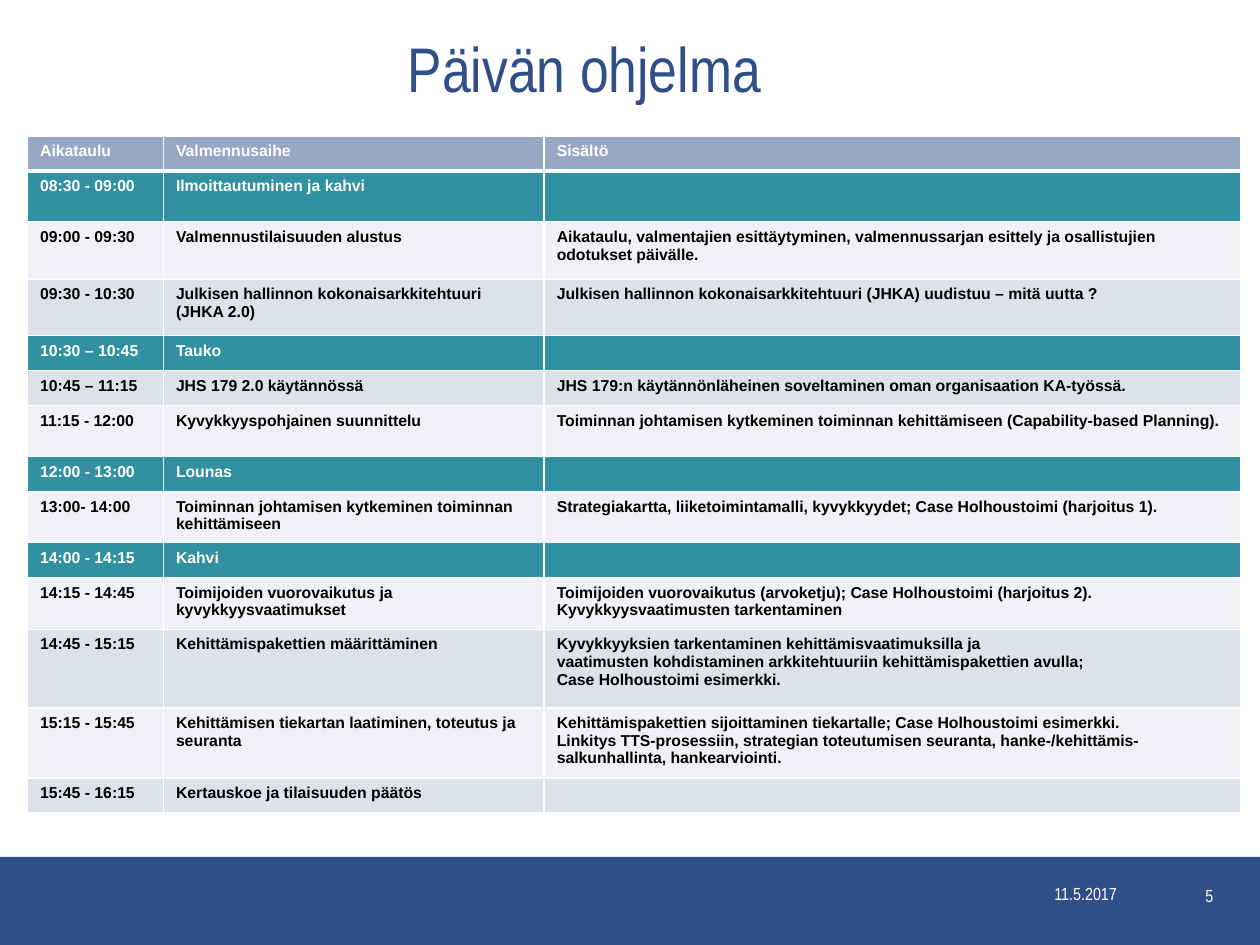
from lxml.etree import SubElement
from pptx import Presentation
from pptx.dml.color import RGBColor
from pptx.enum.shapes import MSO_SHAPE
from pptx.enum.text import MSO_ANCHOR, PP_ALIGN
from pptx.oxml.ns import qn
from pptx.util import Pt

THEME = {
    "navy": "304E88", "header": "98A7C4", "break": "3191A0",
    "bands": ("EFF1F5", "DDE1EA"), "white": "FFFFFF", "black": "000000",
    "display_font": "Arial Narrow", "table_font": "Arial",
    "title_size": 36, "table_size": 9, "footer_size": 10,
}

TITLE = "Päivän ohjelma"
DATE, PAGE = "11.5.2017", "5"
COLUMN_WIDTHS = (77.6, 217.6, 398.2)
# kind, height, time, topic, content paragraphs
PROGRAMME = [
    ("header", 20, "Aikataulu", "Valmennusaihe", ["Sisältö"]),
    ("break", 29.2, "08:30 - 09:00", "Ilmoittautuminen ja kahvi", []),
    ("session", 32.4, "09:00 - 09:30", "Valmennustilaisuuden alustus",
     ["Aikataulu, valmentajien esittäytyminen, valmennussarjan esittely ja "
      "osallistujien odotukset päivälle."]),
    ("session", 32.4, "09:30 - 10:30", "Julkisen hallinnon kokonaisarkkitehtuuri (JHKA 2.0)",
     ["Julkisen hallinnon kokonaisarkkitehtuuri (JHKA) uudistuu – mitä uutta ?"]),
    ("break", 20, "10:30 – 10:45", "Tauko", []),
    ("session", 20, "10:45 – 11:15", "JHS 179 2.0 käytännössä",
     ["JHS 179:n käytännönläheinen soveltaminen oman organisaation KA-työssä."]),
    ("session", 29.2, "11:15 - 12:00", "Kyvykkyyspohjainen suunnittelu",
     ["Toiminnan johtamisen kytkeminen toiminnan kehittämiseen (Capability-based Planning)."]),
    ("break", 20, "12:00 - 13:00", "Lounas", []),
    ("session", 29.2, "13:00- 14:00", "Toiminnan johtamisen kytkeminen toiminnan kehittämiseen",
     ["Strategiakartta, liiketoimintamalli, kyvykkyydet; Case Holhoustoimi (harjoitus 1)."]),
    ("break", 20, "14:00 - 14:15", "Kahvi", []),
    ("session", 29.5, "14:15 - 14:45", "Toimijoiden vuorovaikutus ja kyvykkyysvaatimukset",
     ["Toimijoiden vuorovaikutus (arvoketju); Case Holhoustoimi (harjoitus 2).",
      "Kyvykkyysvaatimusten tarkentaminen"]),
    ("session", 45, "14:45 - 15:15", "Kehittämispakettien määrittäminen",
     ["Kyvykkyyksien tarkentaminen kehittämisvaatimuksilla ja",
      "vaatimusten kohdistaminen arkkitehtuuriin kehittämispakettien avulla;",
      "Case Holhoustoimi esimerkki."]),
    ("session", 40, "15:15 - 15:45", "Kehittämisen tiekartan laatiminen, toteutus ja seuranta",
     ["Kehittämispakettien sijoittaminen tiekartalle; Case Holhoustoimi esimerkki.",
      "Linkitys TTS-prosessiin, strategian toteutumisen seuranta, "
      "hanke-/kehittämis-salkunhallinta, hankearviointi."]),
    ("session", 20, "15:45 - 16:15", "Kertauskoe ja tilaisuuden päätös", []),
]


def rgb(name):
    return RGBColor.from_string(THEME.get(name, name))


def style(font, face, size, color, bold=False):
    formats = {"name": THEME[face], "size": Pt(THEME[size]), "bold": bold}
    for attribute, value in formats.items():
        setattr(font, attribute, value)
    font.color.rgb = rgb(color)


def add_label(slide, text, box, size, color, align, anchor):
    frame = slide.shapes.add_textbox(*map(Pt, box)).text_frame
    frame.word_wrap = True
    frame.vertical_anchor = anchor
    paragraph = frame.paragraphs[0]
    paragraph.alignment = align
    run = paragraph.add_run()
    run.text = text
    style(run.font, "display_font", size, color)


def add_borders(cell, is_header):
    properties = cell._tc.get_or_add_tcPr()
    for side in "LRTB":
        width = 3 if is_header and side == "B" else 1
        line = SubElement(properties, qn(f"a:ln{side}"), w=str(Pt(width)))
        fill = SubElement(line, qn("a:solidFill"))
        SubElement(fill, qn("a:srgbClr"), val=THEME["white"])


def fill_cell(cell, paragraphs, fill, color, is_header):
    add_borders(cell, is_header)
    cell.fill.solid()
    cell.fill.fore_color.rgb = rgb(fill)
    frame = cell.text_frame
    if not paragraphs:
        # An empty cell keeps the small type size, so its row stays low
        SubElement(frame.paragraphs[0]._p, qn("a:endParaRPr"),
                   sz=str(THEME["table_size"] * 100))
    for index, text in enumerate(paragraphs):
        paragraph = frame.add_paragraph() if index else frame.paragraphs[0]
        run = paragraph.add_run()
        run.text = text
        style(run.font, "table_font", "table_size", color, bold=True)


def add_programme(slide):
    heights = [row[1] for row in PROGRAMME]
    table = slide.shapes.add_table(
        len(PROGRAMME), len(COLUMN_WIDTHS), Pt(15.8), Pt(77.8),
        Pt(sum(COLUMN_WIDTHS)), Pt(sum(heights))).table
    for column, width in zip(table.columns, COLUMN_WIDTHS):
        column.width = Pt(width)
    for number, (kind, height, time, topic, content) in enumerate(PROGRAMME):
        table.rows[number].height = Pt(height)
        is_session = kind == "session"
        fill = THEME["bands"][number % 2] if is_session else kind
        color = "black" if is_session else "white"
        for cell, paragraphs in zip(table.rows[number].cells, ([time], [topic], content)):
            fill_cell(cell, paragraphs, fill, color, kind == "header")


def main():
    presentation = Presentation()
    presentation.slide_width, presentation.slide_height = Pt(720), Pt(540)
    slide = presentation.slides.add_slide(presentation.slide_layouts[6])

    footer = slide.shapes.add_shape(MSO_SHAPE.RECTANGLE, Pt(0), Pt(489.6), Pt(720), Pt(50.4))
    footer.shadow.inherit = False
    footer.fill.solid()
    footer.fill.fore_color.rgb = rgb("navy")
    footer.line.fill.background()

    add_label(slide, TITLE, (6.5, 11.5, 655, 54), "title_size", "navy",
              PP_ALIGN.CENTER, MSO_ANCHOR.MIDDLE)
    add_programme(slide)
    add_label(slide, DATE, (595.4, 502, 67, 17.3), "footer_size", "white",
              PP_ALIGN.LEFT, MSO_ANCHOR.MIDDLE)
    add_label(slide, PAGE, (662.4, 502, 38, 16.6), "footer_size", "white",
              PP_ALIGN.RIGHT, MSO_ANCHOR.TOP)
    presentation.save("out.pptx")


if __name__ == "__main__":
    main()
